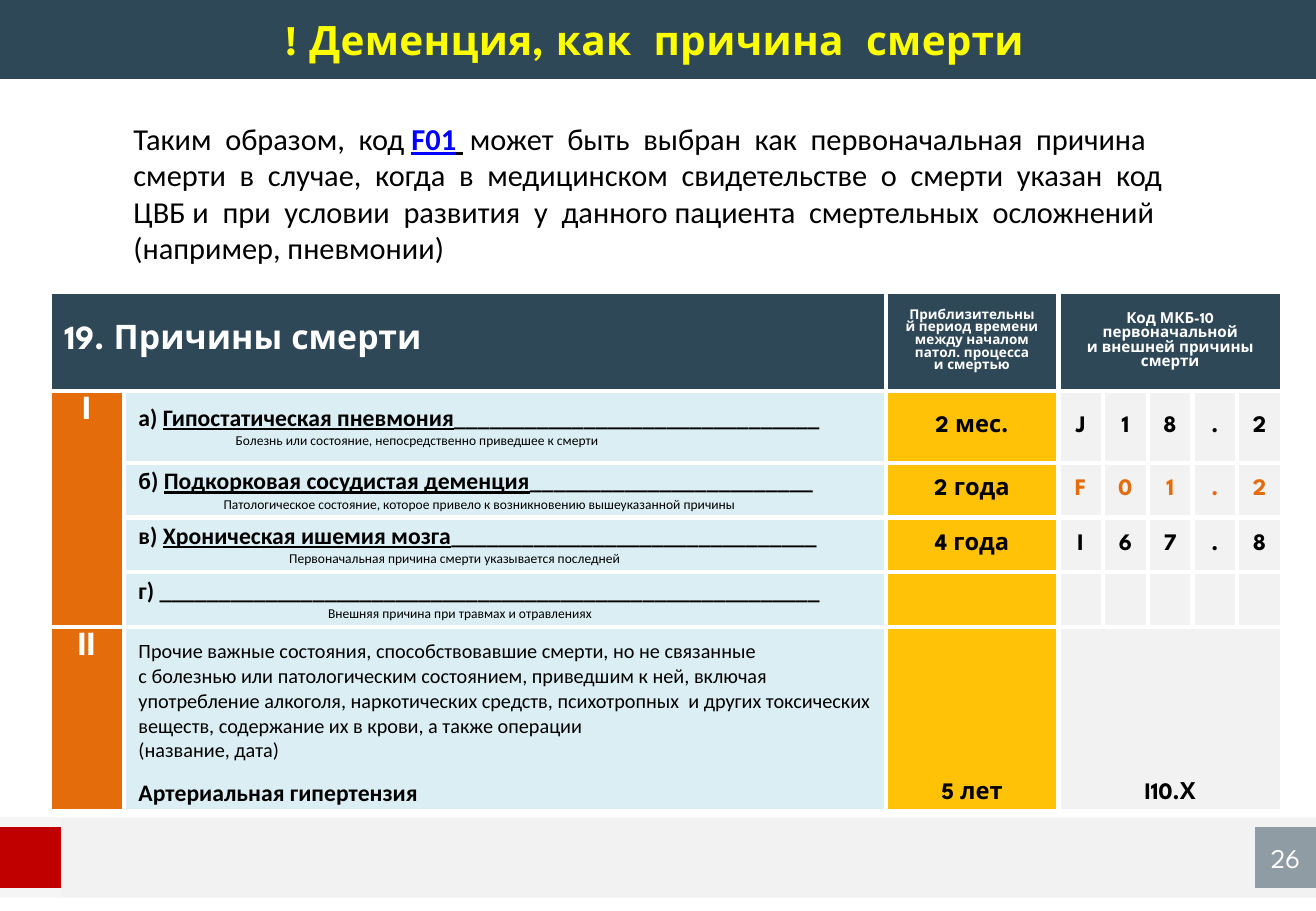
from lxml import etree
from pptx import Presentation
from pptx import util as u
from pptx.dml.color import RGBColor
from pptx.enum import shapes, text
from pptx.oxml import ns

W, H = u.Inches(10.83), u.Inches(7.5)
COLORS = {
    "navy": "2F4858", "gray": "F2F2F2", "red": "C00000", "orange": "E46C0A",
    "amber": "FFC207", "ice": "DBEEF4", "white": "FFFFFF", "black": "000000",
    "yellow": "FFFF00", "blue": "0000FF",
}
HEAD, BODY = "League Spartan", "Calibri"
CENTER = text.PP_ALIGN.CENTER
MIDDLE = text.MSO_ANCHOR.MIDDLE

# Table grid, in hundredths of the slide's width and height
COLS = [5.63, 57.89, 13.11] + [3.4] * 5
ROWS = [10.93, 7.87, 6, 6, 6, 16.4, 3.87]

# Letter, cause, length of the rule, caption, caption indent, period, code
CAUSES = [
    ("а) ", "Гипостатическая пневмония", 31,
     "Болезнь или состояние, непосредственно приведшее к смерти",
     0.8, "2 мес.", "J18.2"),
    ("б) ", "Подкорковая сосудистая деменция", 24,
     "Патологическое состояние, которое привело к возникновению "
     "вышеуказанной причины", 0.7, "2 года", "F01.2"),
    ("в) ", "Хроническая ишемия мозга", 31,
     "Первоначальная причина смерти указывается последней",
     1.24, "4 года", "I67.8"),
    ("г) ", "", 56, "Внешняя причина при травмах и отравлениях",
     1.56, "", ""),
]


def rgb(name):
    return RGBColor.from_string(COLORS[name])


def col(n):
    return int(W * n / 100)


def row(n):
    return int(H * n / 100)


def area(x, y, w, h):
    return col(x), row(y), col(w), row(h)


def add_run(p, words, size=14, font=BODY, color="black", bold=False,
            underline=False, spacing=None):
    r = p.add_run()
    r.text = words
    r.font.size, r.font.name = u.Pt(size), font
    r.font.color.rgb = rgb(color)
    r.font.bold, r.font.underline = bold, underline
    if spacing:
        r.font._element.set("spc", str(spacing))


def add_lines(tf, lines, align=None, **fmt):
    """Each line is one paragraph in the same format."""
    for i, line in enumerate(lines):
        p = tf.add_paragraph() if i else tf.paragraphs[0]
        p.alignment = align
        add_run(p, line, **fmt)


def add_block(s, x, y, w, h, color, opacity=None):
    sp = s.shapes.add_shape(shapes.MSO_SHAPE.RECTANGLE, *area(x, y, w, h))
    sp.shadow.inherit = False
    sp.fill.solid()
    sp.fill.fore_color.rgb = rgb(color)
    sp.line.fill.background()
    if opacity:
        clr = sp.element.spPr.find(".//" + ns.qn("a:srgbClr"))
        etree.SubElement(clr, ns.qn("a:alpha"), val=str(opacity * 1000))
    return sp


def set_borders(cell, hidden=""):
    tcPr = cell._tc.get_or_add_tcPr()
    for i, side in enumerate("LRTB"):
        ln = etree.Element(ns.qn("a:ln" + side), w=str(u.Pt(3)))
        if side == hidden:
            etree.SubElement(ln, ns.qn("a:noFill"))
        else:
            fill = etree.SubElement(ln, ns.qn("a:solidFill"))
            etree.SubElement(fill, ns.qn("a:srgbClr"), val=COLORS["white"])
        tcPr.insert(i, ln)


def style_cell(cell, color, left=0.05, right=0.05, top=0, anchor=MIDDLE):
    cell.fill.solid()
    cell.fill.fore_color.rgb = rgb(color)
    cell.margin_left, cell.margin_right = u.Inches(left), u.Inches(right)
    cell.margin_top, cell.margin_bottom = u.Inches(top), 0
    cell.vertical_anchor = anchor
    return cell.text_frame


def add_frame(s):
    add_block(s, 0, 89.73, 100, 8.8, "gray")
    bar = add_block(s, 0, 0, 100, 8.67, "navy")
    add_block(s, 0, 89.73, 4.62, 8.8, "white", opacity=30)
    add_block(s, 0, 90.8, 4.62, 6.67, "red")
    number = add_block(s, 95.38, 90.8, 4.62, 6.67, "navy", opacity=50)
    number.text_frame.vertical_anchor = MIDDLE
    add_lines(number.text_frame, ["26"], CENTER, size=16, font=HEAD,
              color="white")
    return bar


def add_title(s, bar):
    title = s.shapes.title
    title.left, title.top, title.width, title.height = area(6, 0, 88.37, 8.67)
    bar.element.addnext(title.element)
    tf = title.text_frame
    tf.margin_left = tf.margin_right = tf.margin_top = tf.margin_bottom = 0
    tf.vertical_anchor = MIDDLE
    tf.auto_size = text.MSO_AUTO_SIZE.NONE
    add_lines(tf, ["! Деменция, как  причина  смерти "], CENTER, size=24,
              font=HEAD, color="yellow", bold=True, spacing=20)


def add_intro(s):
    tf = s.shapes.add_textbox(*area(9.23, 12.53, 82.64, 21.6)).text_frame
    tf.word_wrap = True
    p = tf.paragraphs[0]
    add_run(p, "Таким  образом,  код ", size=18)
    add_run(p, "F01", size=18, color="blue", bold=True, underline=True)
    add_run(p, " ", size=18, bold=True, underline=True)
    add_run(p, " может  быть  выбран  как  первоначальная  причина  смерти  "
            "в  случае,  когда  в  медицинском  свидетельстве  о  смерти  "
            "указан  код ЦВБ и  при  условии  развития  у  данного пациента  "
            "смертельных  осложнений (например, пневмонии)", size=18)


def fill_header(tb):
    white = dict(font=HEAD, color="white", bold=True)
    add_lines(style_cell(tb.cell(0, 0), "navy", left=0.12),
              ["19. Причины смерти"], size=20, **white)
    add_lines(style_cell(tb.cell(0, 2), "navy", 0.16, 0.16),
              ["Приблизительный период времени между началом патол. процесса",
               "и смертью"], CENTER, size=8, **white)
    add_lines(style_cell(tb.cell(0, 3), "navy", 0.16, 0.16),
              ["Код МКБ-10", "первоначальной", "и внешней причины смерти"],
              CENTER, size=9, **white)
    # Part numbers in the first column
    for i, part in ((1, "I"), (5, "II")):
        tf = style_cell(tb.cell(i, 0), "orange", top=0.04,
                        anchor=text.MSO_ANCHOR.TOP)
        add_lines(tf, [part], CENTER, size=20, **white)


def fill_cause(tb, i, letter, cause, rule, caption, indent, period, code):
    tf = style_cell(tb.cell(i, 1), "ice", left=0.12)
    p = tf.paragraphs[0]
    add_run(p, letter, bold=True)
    if cause:
        add_run(p, cause, bold=True, underline=True)
    add_run(p, "_" * rule, bold=True)
    p = tf.add_paragraph()
    p._p.get_or_add_pPr().set("marL", str(u.Inches(indent)))
    add_run(p, caption, size=8)
    # Period, then one sign of the code per cell
    marks = [(period, "amber", "black")]
    ink = "orange" if code.startswith("F") else "black"
    marks += [(sign, "gray", ink) for sign in code or [""] * 5]
    for j, (mark, back, color) in enumerate(marks, 2):
        tf = style_cell(tb.cell(i, j), back)
        if mark:
            add_lines(tf, [mark], CENTER, font=HEAD, color=color, bold=True)


def fill_other_conditions(tb):
    add_lines(style_cell(tb.cell(5, 1), "ice", left=0.12), [
        "Прочие важные состояния, способствовавшие смерти, но не связанные",
        "с болезнью или патологическим состоянием, приведшим к ней, включая "
        "употребление алкоголя, наркотических средств, психотропных  и других "
        "токсических веществ, содержание их в крови, а также операции",
        "(название, дата)"], size=12)
    style_cell(tb.cell(5, 2), "amber")
    style_cell(tb.cell(5, 3), "gray")
    add_lines(style_cell(tb.cell(6, 1), "ice", left=0.12),
              ["Артериальная гипертензия"], bold=True)
    for j, words, back in ((2, "5 лет", "amber"), (3, "I10.Х", "gray")):
        add_lines(style_cell(tb.cell(6, j), back, 0.16, 0.16), [words],
                  CENTER, font=HEAD, bold=True)


def add_causes_table(s):
    tb = s.shapes.add_table(len(ROWS), len(COLS),
                            *area(3.79, 32, sum(COLS), sum(ROWS))).table
    tb.first_row = tb.horz_banding = False
    for c, share in zip(tb.columns, COLS):
        c.width = col(share)
    for r, share in zip(tb.rows, ROWS):
        r.height = row(share)
    # The last two rows read as one block
    for i in range(len(ROWS)):
        for j in range(len(COLS)):
            hidden = {5: "B", 6: "T"}.get(i, "") if j else ""
            set_borders(tb.cell(i, j), hidden)
    for top, left, bottom, right in ((0, 0, 0, 1), (0, 3, 0, 7), (1, 0, 4, 0),
                                     (5, 0, 6, 0), (5, 3, 5, 7), (6, 3, 6, 7)):
        tb.cell(top, left).merge(tb.cell(bottom, right))
    fill_header(tb)
    for i, cause in enumerate(CAUSES, 1):
        fill_cause(tb, i, *cause)
    fill_other_conditions(tb)


def main():
    prs = Presentation()
    prs.slide_width, prs.slide_height = W, H
    s = prs.slides.add_slide(prs.slide_layouts[5])
    add_title(s, add_frame(s))
    add_intro(s)
    add_causes_table(s)
    prs.save("out.pptx")


if __name__ == "__main__":
    main()
